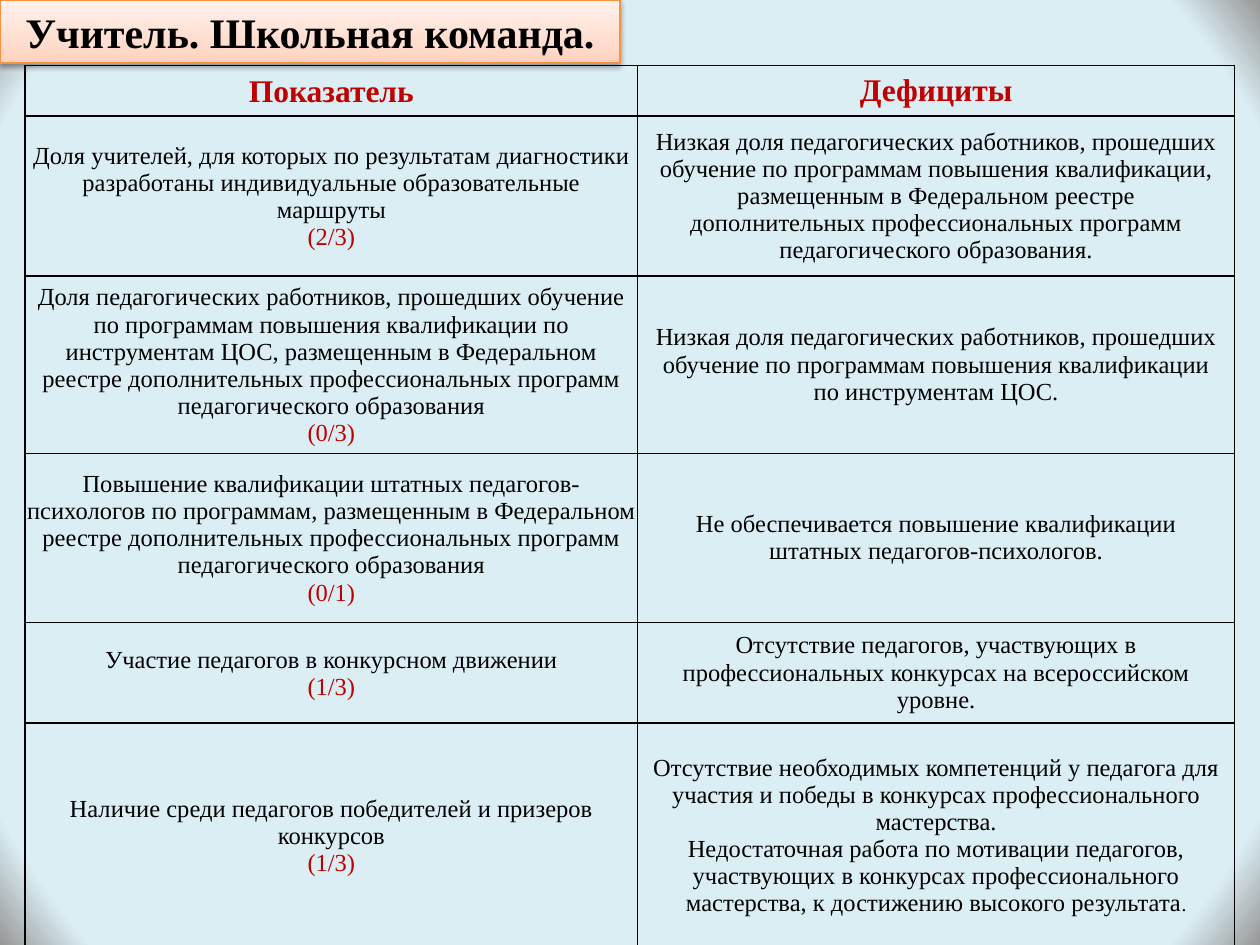
from lxml import etree
from pptx import Presentation
from pptx.dml.color import RGBColor
from pptx.enum.text import MSO_ANCHOR, PP_ALIGN
from pptx.oxml import parse_xml
from pptx.oxml.ns import qn
from pptx.util import Inches, Pt

CENTER = PP_ALIGN.CENTER
MIDDLE = MSO_ANCHOR.MIDDLE
TITLE_ONLY = 5
FONT = "Times New Roman"
BLACK, RED = "000000", "C00000"
NAMESPACE = 'xmlns:a="http://schemas.openxmlformats.org/drawingml/2006/main"'

COLUMN_WIDTHS = [4.86, 4.74]
HEADER_HEIGHT = 0.4
HEADERS = ["Показатель", "Дефициты"]
# Row height, indicator, score, deficits
ROWS = [
    (1.27, "Доля учителей, для которых по результатам диагностики разработаны "
     "индивидуальные образовательные маршруты", "(2/3)",
     ["Низкая доля педагогических работников, прошедших обучение по программам "
      "повышения квалификации, размещенным в Федеральном реестре дополнительных "
      "профессиональных программ педагогического образования."]),
    (1.41, "Доля педагогических работников, прошедших обучение по программам "
     "повышения квалификации по инструментам ЦОС, размещенным в Федеральном реестре "
     "дополнительных профессиональных программ педагогического образования", "(0/3)",
     ["Низкая доля педагогических работников, прошедших обучение по программам "
      "повышения квалификации по инструментам ЦОС."]),
    (1.34, "Повышение квалификации штатных педагогов-психологов по программам, "
     "размещенным в Федеральном реестре дополнительных профессиональных программ "
     "педагогического образования", "(0/1)",
     ["Не обеспечивается повышение квалификации штатных педагогов-психологов."]),
    (0.8, "Участие педагогов в конкурсном движении", "(1/3)",
     ["Отсутствие педагогов, участвующих в профессиональных конкурсах на "
      "всероссийском уровне."]),
    (1.79, "Наличие среди педагогов победителей и призеров конкурсов", "(1/3)",
     ["Отсутствие необходимых компетенций у педагога для участия и победы в "
      "конкурсах профессионального мастерства.",
      "Недостаточная работа по мотивации педагогов, участвующих в конкурсах "
      "профессионального мастерства, к достижению высокого результата"]),
]


def color(value):
    return RGBColor.from_string(value)


def add_text(paragraph, text, size=14, fill=BLACK, bold=False):
    paragraph.alignment = CENTER
    run = paragraph.add_run()
    run.text = text
    run.font.name = FONT
    run.font.size = Pt(size)
    run.font.bold = bold
    run.font.color.rgb = color(fill)


def set_gradient(fill, parent, stops, direction):
    """Fill parent with (percent, colour) stops along the given direction XML."""
    fill.gradient()
    placeholder = next(parent.iter(qn("a:gradFill")))
    stop_list = "".join(
        f'<a:gs pos="{percent * 1000}"><a:srgbClr val="{value}"/></a:gs>'
        for percent, value in stops)
    gradient = parse_xml(f'<a:gradFill {NAMESPACE} rotWithShape="1">'
                         f'<a:gsLst>{stop_list}</a:gsLst>{direction}</a:gradFill>')
    placeholder.getparent().replace(placeholder, gradient)


def paint_background(slide):
    circle = ('<a:path path="circle"><a:fillToRect l="50000" t="50000" '
              'r="50000" b="50000"/></a:path>')
    set_gradient(slide.background.fill, slide.element,
                 [(91, "DBEEF4"), (100, "979797")], circle)


def format_title(title, left, top, width, height):
    title.left, title.top = Inches(left), Inches(top)
    title.width, title.height = Inches(width), Inches(height)
    set_gradient(title.fill, title.element,
                 [(0, "FFD2BD"), (35, "FFDED0"), (100, "FFF2ED")],
                 '<a:lin ang="16200000" scaled="1"/>')
    title.line.color.rgb = color("F69240")
    title.line.width = Pt(0.75)
    title.element.spPr.append(parse_xml(
        f'<a:effectLst {NAMESPACE}><a:outerShdw blurRad="{Pt(3.1)}" '
        f'dist="{Pt(1.6)}" dir="5400000" rotWithShape="0"><a:srgbClr val="{BLACK}">'
        '<a:alpha val="38000"/></a:srgbClr></a:outerShdw></a:effectLst>'))
    frame = title.text_frame
    frame.word_wrap = True
    frame.vertical_anchor = MIDDLE
    add_text(frame.paragraphs[0], "Учитель. Школьная команда.", size=24, bold=True)


def add_borders(cell):
    properties = cell._tc.get_or_add_tcPr()
    for index, side in enumerate(("lnL", "lnR", "lnT", "lnB")):
        line = etree.Element(qn(f"a:{side}"), w=str(Pt(1)))
        solid = etree.SubElement(line, qn("a:solidFill"))
        etree.SubElement(solid, qn("a:srgbClr"), val=BLACK)
        properties.insert(index, line)


def fill_cell(cell, lines, **text_format):
    """Write (text, colour) lines, one paragraph each."""
    cell.fill.background()
    add_borders(cell)
    cell.vertical_anchor = MIDDLE
    frame = cell.text_frame
    for index, (text, fill) in enumerate(lines):
        paragraph = frame.add_paragraph() if index else frame.paragraphs[0]
        add_text(paragraph, text, fill=fill, **text_format)


def add_indicator_table(slide, left, top):
    heights = [HEADER_HEIGHT] + [row[0] for row in ROWS]
    table = slide.shapes.add_table(
        len(heights), len(COLUMN_WIDTHS), Inches(left), Inches(top),
        Inches(sum(COLUMN_WIDTHS)), Inches(sum(heights))).table
    table.first_row = table.horz_banding = False
    for column, width in zip(table.columns, COLUMN_WIDTHS):
        column.width = Inches(width)
    for row, height in zip(table.rows, heights):
        row.height = Inches(height)
        indicator = row.cells[0]
        indicator.margin_left = indicator.margin_right = Inches(0.01)
        indicator.margin_top, indicator.margin_bottom = Inches(0.01), 0

    for column, header in enumerate(HEADERS):
        fill_cell(table.cell(0, column), [(header, RED)], size=18, bold=True)
    for row, (_, indicator, score, deficits) in enumerate(ROWS, start=1):
        fill_cell(table.cell(row, 0), [(indicator, BLACK), (score, RED)])
        fill_cell(table.cell(row, 1), [(text, BLACK) for text in deficits])
    last_cell = table.cell(len(ROWS), 1)
    add_text(last_cell.text_frame.paragraphs[-1], ".", size=11)


def main():
    presentation = Presentation()
    presentation.slide_width, presentation.slide_height = Inches(10), Inches(7.5)
    slide = presentation.slides.add_slide(presentation.slide_layouts[TITLE_ONLY])
    paint_background(slide)
    format_title(slide.shapes.title, 0, 0, 4.92, 0.5)
    add_indicator_table(slide, 0.2, 0.52)
    presentation.save("out.pptx")


if __name__ == "__main__":
    main()
